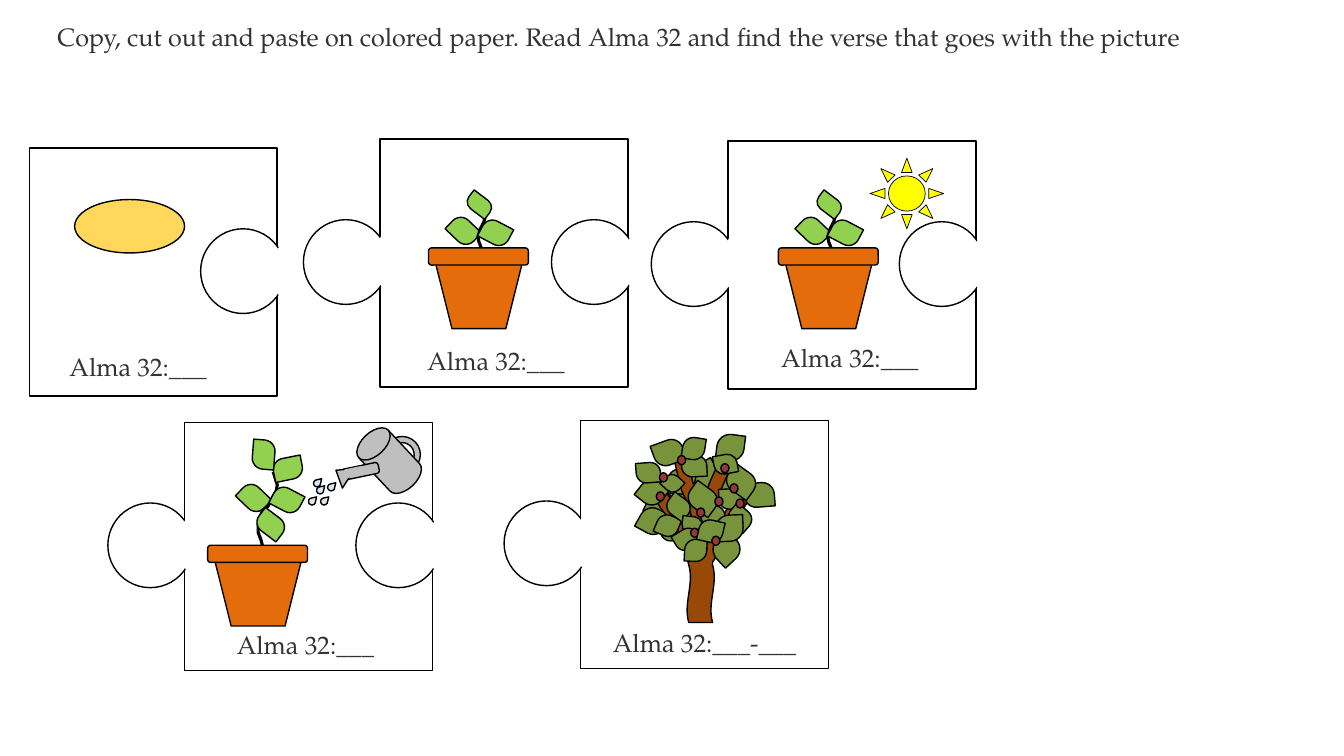
from pptx import Presentation
from pptx.dml.color import RGBColor
from pptx.enum.shapes import MSO_SHAPE
from pptx.enum.text import MSO_ANCHOR, MSO_AUTO_SIZE, PP_ALIGN
from pptx.util import Inches, Pt

CELL = Inches(0.1)
BLACK = RGBColor(0x00, 0x00, 0x00)
WHITE = RGBColor(0xFF, 0xFF, 0xFF)
TEXT = RGBColor(0x33, 0x33, 0x33)
SEED = RGBColor(0xFF, 0xD8, 0x5B)
LIME = RGBColor(0x92, 0xD0, 0x50)
CLAY = RGBColor(0xE4, 0x6C, 0x0A)
SUN = RGBColor(0xFF, 0xFF, 0x00)
STEEL = RGBColor(0xBF, 0xBF, 0xBF)
WATER = RGBColor(0xDC, 0xE6, 0xF2)
OLIVE = RGBColor(0x77, 0x93, 0x3C)
BARK = RGBColor(0x98, 0x48, 0x07)
BERRY = RGBColor(0x95, 0x37, 0x35)

FONT = {"name": "TeX Gyre Pagella", "size": Pt(18), "bold": False}
FRAME = {"word_wrap": False, "auto_size": MSO_AUTO_SIZE.SHAPE_TO_FIT_TEXT,
         "vertical_anchor": MSO_ANCHOR.TOP}

SPROUT = [(2, -2.8, 2.9, 2.2, 43.7), (5.2, -2.6, 2.9, 2.2, 27.8),
          (4.2, -5.6, 1.7, 2.6, 307.3)]
SHOOT = [(5.3, 1.3), (5.4, 1), (5.4, 0.5), (5.2, -0.1), (5, -0.6), (4.9, -1.1),
         (5, -1.4), (5.1, -1.8), (5.3, -2.2), (5.5, -2.6), (5.6, -3),
         (5.6, -3.4), (5.4, -4.3)]
PLANT = [(3.1, -5.8, 2.9, 2.2, 43.7), (6.4, -5.6, 2.9, 2.2, 27.8),
         (5.2, -3.5, 2.1, 2.9, 307.3), (6.5, -8.7, 2.9, 2.2, 348.6),
         (4.1, -10.1, 2.9, 2.2, 274.6)]
STALK = [(5.3, 1.6), (5.5, 1.1), (5.5, 0.3), (5.3, -0.5), (5, -1.3), (5, -2.1),
         (5.1, -2.4), (5.4, -3.4), (6, -3.9), (6.4, -4.7), (6.8, -5.4),
         (6.9, -6), (6.5, -7.3)]
DROPS = [(2.4, 6.3), (3.5, 6), (2.1, 5.6), (1.6, 7.4), (2.8, 7.4)]

BACK = [(10.6, 7.2, 2.4, 3, 85.5), (8.6, 5.9, 2.7, 2.6, 329.9),
        (6.2, 6.5, 2.7, 2.6, 10.4), (6.3, 9, 2.2, 2.2, 15.3),
        (4.2, 8.8, 2.7, 2.6, 26.4), (3.4, 10.4, 2.7, 2.6, 28.9),
        (5.7, 11.4, 2, 2.4, 71.7)]
WOOD = [(3.8, 14.7, 11.4, 2.7, 270), (2, 10.1, 9.5, 1.5, 235.5),
        (7.1, 11.7, 9.5, 1.5, 298.7), (5.9, 8.6, 9.5, 1.5, 289.4),
        (3.8, 8.4, 9.5, 1.5, 252.4)]
CROWN = [(3.4, 7.6, 2.5, 2.5, 38.2), (11.1, 3.1, 2.7, 2.6, 187.3),
         (5.1, 3.4, 2.4, 3, 69.8), (5.8, 7.1, 1.8, 1.7, 42.2),
         (3.3, 5.7, 2, 2.4, 85.5), (7.8, 5, 2.1, 2.5, 87.1),
         (5.1, 11.1, 2.2, 2.1, 22.8), (6.3, 9.1, 2, 2.4, 126.4),
         (9.7, 10, 2, 2.4, 87.1), (8.5, 8, 2.4, 3, 126),
         (7.7, 3.4, 2.2, 2.2, 8.9), (11.5, 8.3, 2, 2.4, 87.1),
         (14.1, 7.6, 2.4, 3, 85.5), (12.3, 6.3, 2.4, 3, 126),
         (11, 4.9, 1.9, 2.3, 79.4), (12.4, 10.2, 2, 2.4, 130.9)]
FRUIT = [(5.1, 8.8), (13, 9.5), (12.4, 8), (5.4, 6.9), (7.2, 5.2), (11.5, 6),
         (9.1, 10.4), (10.9, 9.3)]
LOW = [(7.8, 11.1, 1.7, 2, 276.1), (7.1, 12.3, 2, 2.4, 238.6)]
FRONT = [(10.7, 13.2, 2.7, 2.6, 137.2), (11, 11.1, 2.7, 2.6, 177.7),
         (7.9, 13.5, 2.2, 2.2, 182.6), (9.3, 11.6, 2.4, 2.2, 193.2)]


class Sheet:
    """Puzzle sheet measured in cells of a tenth of an inch."""

    def __init__(self, slide):
        self.slide = slide
        self.move(0, 0)

    def move(self, x, y):
        self.x, self.y = x, y

    def spot(self, x, y):
        return round((self.x + x) * CELL), round((self.y + y) * CELL)

    def form(self, kind, box, fill, line=BLACK, width=1, adj=()):
        x, y, w, h, *turn = box
        shape = self.group.shapes.add_shape(
            kind, *self.spot(x, y), round(w * CELL), round(h * CELL))
        shape.shadow.inherit = False
        shape.rotation = turn[0] if turn else 0
        for i, value in enumerate(adj):
            shape.adjustments[i] = value
        shape.fill.solid()
        shape.fill.fore_color.rgb = fill
        if line is None:
            shape.line.fill.background()
        else:
            shape.line.color.rgb = line
            shape.line.width = Pt(width)

    def words(self, shape, text):
        frame = shape.text_frame
        for key, value in FRAME.items():
            setattr(frame, key, value)
        para = frame.paragraphs[0]
        para.alignment = PP_ALIGN.LEFT
        run = para.add_run()
        run.text = text
        for key, value in FONT.items():
            setattr(run.font, key, value)
        run.font.color.rgb = TEXT

    def title(self, text):
        shape = self.slide.shapes.title
        place = {"left": 4.7, "top": 1.6, "width": 114, "height": 4}
        for key, value in place.items():
            setattr(shape, key, round(value * CELL))
        self.words(shape, text)

    def label(self, x, y, w, text):
        self.move(0, 0)
        self.words(self.group.shapes.add_textbox(
            *self.spot(x, y), round(w * CELL), 4 * CELL), text)

    def piece(self, x, y, left=True, right=True):
        self.group = self.slide.shapes.add_group_shape()
        self.move(x, y)
        self.form(MSO_SHAPE.RECTANGLE, (0, 0, 24.6, 24.6), WHITE)
        knobs = [(-7.6, 8, BLACK, left), (17, 8, BLACK, right),
                 (24.1, 8, WHITE, right), (-0.6, 7.9, WHITE, left)]
        for dx, dy, line, shown in knobs:
            if shown:
                self.form(MSO_SHAPE.OVAL, (dx, dy, 8.4, 8.4), WHITE, line)

    def leaves(self, boxes, fill):
        for box in boxes:
            self.form(MSO_SHAPE.ROUND_2_DIAG_RECTANGLE, box, fill, adj=(0.5, 0))

    def stem(self, dots):
        first, *rest = [self.spot(*dot) for dot in dots]
        pen = self.group.shapes.build_freeform(*first)
        pen.add_line_segments(rest, close=False)
        shape = pen.convert_to_shape()
        shape.shadow.inherit = False
        shape.fill.background()
        shape.line.color.rgb = BLACK
        shape.line.width = Pt(2.25)

    def plant(self, x, y, leaves, dots):
        self.move(x, y)
        self.leaves(leaves[:1], LIME)
        self.stem(dots)
        self.leaves(leaves[1:2], LIME)
        self.form(MSO_SHAPE.TRAPEZOID, (0.4, 0.3, 9.2, 7.7, 180), CLAY)
        self.form(MSO_SHAPE.ROUNDED_RECTANGLE, (0, 0, 9.9, 1.7), CLAY)
        self.leaves(leaves[2:], LIME)

    def can(self, x, y):
        self.move(x, y)
        self.form(MSO_SHAPE.DONUT, (9.1, 1.3, 3.6, 3.6, 316.9), STEEL, adj=(0.17,))
        self.form(MSO_SHAPE.FLOWCHART_MAGNETIC_DISK, (7.6, 0.3, 4, 6.8, 316.9), STEEL)
        self.form(MSO_SHAPE.ROUNDED_RECTANGLE, (6.2, 2.9, 1.1, 3.7, 258.2), STEEL, adj=(0.26,))
        self.form(MSO_SHAPE.ISOSCELES_TRIANGLE, (3.8, 4.3, 2.3, 1.5, 302.6), STEEL)
        self.form(MSO_SHAPE.ROUNDED_RECTANGLE, (5.6, 3.9, 0.9, 1.9, 258.2), STEEL, None, adj=(0.26,))
        for dx, dy in DROPS:
            self.form(MSO_SHAPE.TEAR, (dx, dy, 0.7, 0.7), WATER, adj=(1.29,))

    def fruit(self, spots):
        for dx, dy in spots:
            self.form(MSO_SHAPE.OVAL, (dx, dy, 0.8, 0.9), BERRY)

    def tree(self, x, y):
        self.move(x, y)
        self.leaves(BACK, OLIVE)
        for box in WOOD:
            self.form(MSO_SHAPE.DOUBLE_WAVE, box, BARK)
        self.form(MSO_SHAPE.OVAL, (8.7, 12.2, 1.9, 6.7), BARK, None)
        self.leaves(CROWN, OLIVE)
        self.fruit(FRUIT)
        self.leaves(LOW, OLIVE)
        self.fruit([(8.5, 12.4)])
        self.leaves(FRONT, OLIVE)
        self.fruit([(10.6, 13.2)])


def main():
    deck = Presentation()
    deck.slide_width, deck.slide_height = Inches(13.33), Inches(7.5)
    sheet = Sheet(deck.slides.add_slide(deck.slide_layouts[5]))
    sheet.title("Copy, cut out and paste on colored paper. "
                "Read Alma 32 and find the verse that goes with the picture")
    verse = "Alma 32:___"

    sheet.piece(2.9, 14.7, left=False)
    sheet.form(MSO_SHAPE.OVAL, (4.5, 5.1, 10.9, 5.3), SEED)
    sheet.label(5.9, 34.4, 16.2, verse)

    sheet.piece(37.7, 13.8)
    sheet.plant(42.5, 24.6, SPROUT, SHOOT)
    sheet.label(41.4, 33.8, 16.2, verse)

    sheet.piece(72.2, 14)
    sheet.form(MSO_SHAPE.SUN, (14.1, 1.7, 7.3, 7), SUN, width=0.5)
    sheet.plant(77.2, 24.6, SPROUT, SHOOT)
    sheet.label(76.5, 33.5, 16.2, verse)

    sheet.piece(18.3, 41.9)
    sheet.can(29, 42)
    sheet.plant(20.6, 54.1, PLANT, STALK)
    sheet.label(22.5, 61.9, 16.2, verse)

    sheet.piece(57.6, 41.7, right=False)
    sheet.tree(60, 40)
    sheet.label(59.8, 61.7, 21.2, verse + "-___")
    deck.save("out.pptx")


if __name__ == "__main__":
    main()
